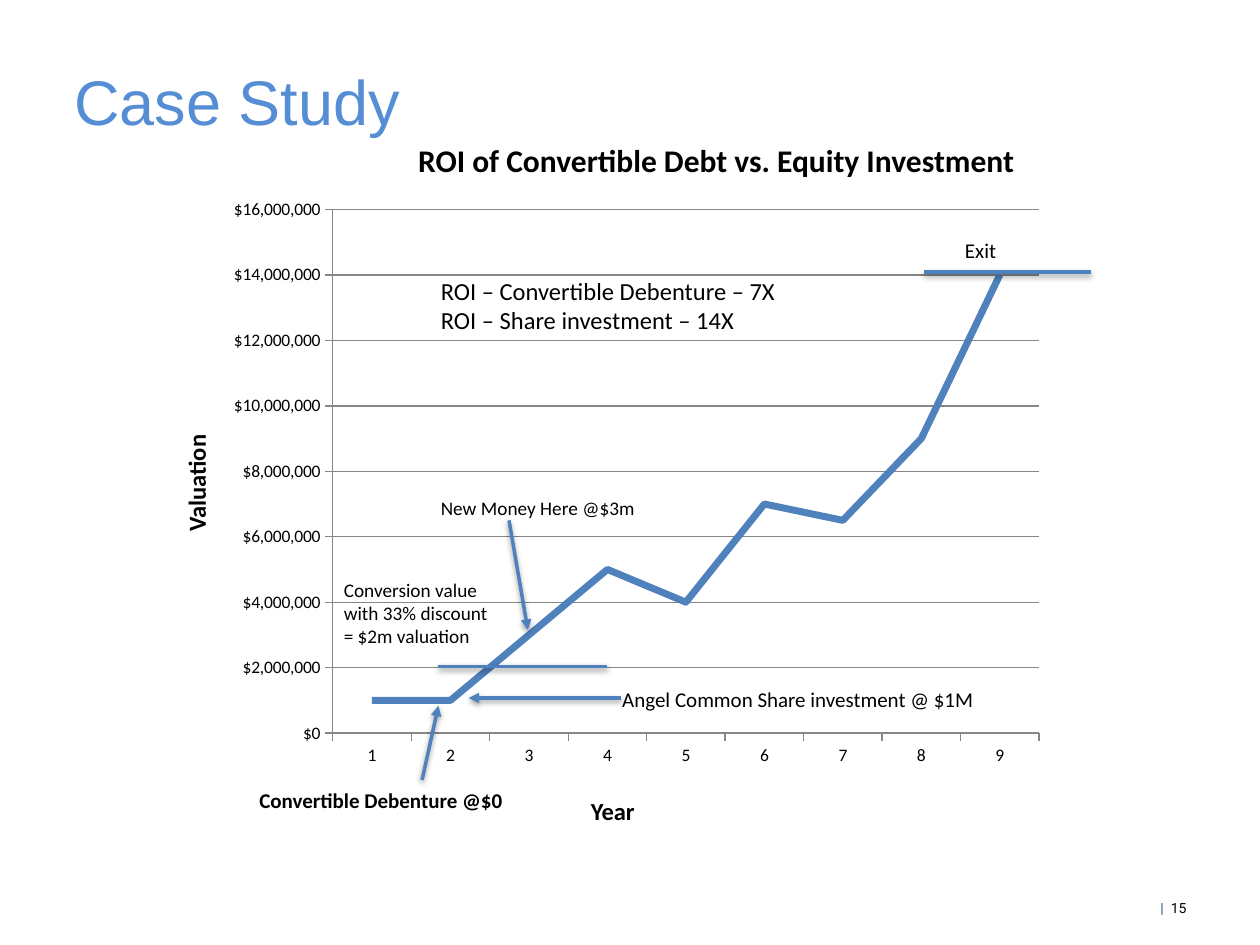
import pptx
import pptx.chart.data
import pptx.dml.color
import pptx.enum.chart
import pptx.enum.shapes
import pptx.enum.text
import pptx.oxml
import pptx.oxml.ns
import pptx.util
from pptx.util import Inches

RGBColor = pptx.dml.color.RGBColor
BLACK = RGBColor(0x00, 0x00, 0x00)
BLUE = RGBColor(0x4F, 0x81, 0xBD)
TITLE_BLUE = RGBColor(0x55, 0x8E, 0xD5)
NAVY = RGBColor(0x1F, 0x49, 0x7D)
GREY = RGBColor(0x86, 0x86, 0x86)

VALUATIONS = [1_000_000, 1_000_000, 3_000_000, 5_000_000, 4_000_000,
              7_000_000, 6_500_000, 9_000_000, 14_000_000]

# left, top, width, height, size, bold, lines
LABELS = [
    (4.84, 5.4, 3.26, 0.3, 12, False, ["Angel Common Share investment @ $1M"]),
    (1.96, 6.2, 2.61, 0.3, 12, True, ["Convertible Debenture @$0"]),
    (4.59, 6.27, 0.68, 0.34, 14, True, ["Year"]),
    (3.4, 2.14, 3.22, 0.57, 14, False,
     ["ROI – Convertible Debenture – 7X", "ROI – Share investment – 14X"]),
    (2.63, 4.54, 1.41, 0.72, 11, False,
     ["Conversion value", "with 33% discount", "= $2m valuation"]),
    (3.4, 3.89, 1.8, 0.28, 11, False, ["New Money Here @$3m"]),
    (7.56, 1.84, 0.55, 0.3, 12, False, ["Exit"]),
    (3.22, 1.07, 5, 0.4, 18, True,
     ["ROI of Convertible Debt vs. Equity Investment"]),
]

# start, end, whether an arrowhead sits at the end
MARKERS = [
    ((3.48, 5.29), (4.82, 5.29), False),  # conversion level
    ((4.04, 4.13), (4.19, 5), True),      # new money
    ((7.33, 2.16), (8.66, 2.16), False),  # exit level
    ((4.93, 5.54), (3.72, 5.54), True),   # common shares
    ((3.35, 6.19), (3.48, 5.6), True),    # debenture
]


def style(font, name, size, color, bold=False):
    font.name = name
    font.size = pptx.util.Pt(size)
    font.color.rgb = color
    font.bold = bold


def add_run(para, text, *font_style):
    span = para.add_run()
    span.text = text
    style(span.font, *font_style)


def add_title(page, text):
    title = page.shapes.title
    title.left, title.top = Inches(0.49), Inches(0.42)
    title.width, title.height = Inches(9), Inches(0.75)
    frame = title.text_frame
    frame.auto_size = pptx.enum.text.MSO_AUTO_SIZE.NONE
    frame.vertical_anchor = pptx.enum.text.MSO_ANCHOR.MIDDLE
    para = frame.paragraphs[0]
    para.alignment = pptx.enum.text.PP_ALIGN.LEFT
    add_run(para, text, "Arial", 36, TITLE_BLUE)


def add_label(page, left, top, width, height, size, bold, lines):
    box = page.shapes.add_textbox(*map(Inches, (left, top, width, height)))
    frame = box.text_frame
    frame.word_wrap = False
    for index, line in enumerate(lines):
        para = frame.add_paragraph() if index else frame.paragraphs[0]
        add_run(para, line, "Calibri", size, BLACK, bold)
    return box


def add_marker(page, start, end, arrow):
    line = page.shapes.add_connector(
        pptx.enum.shapes.MSO_CONNECTOR.STRAIGHT, *map(Inches, start + end))
    line.line.color.rgb = BLUE
    line.line.width = pptx.util.Pt(2)
    namespace = pptx.oxml.ns.nsdecls("a")
    if arrow:
        line.line._get_or_add_ln().append(pptx.oxml.parse_xml(
            f'<a:tailEnd {namespace} type="triangle"/>'))
    # Soft shadow straight below the line
    line._element.spPr.append(pptx.oxml.parse_xml(
        f'<a:effectLst {namespace}><a:outerShdw blurRad="40000" dist="20000"'
        ' dir="5400000" rotWithShape="0"><a:srgbClr val="000000">'
        '<a:alpha val="38000"/></a:srgbClr></a:outerShdw></a:effectLst>'))


def set_plot_area(chart, left, top, width, height):
    """Fix the inner plot area, in fractions of the chart frame."""
    plot_area = chart._chartSpace.chart.plotArea
    for old in plot_area.findall(pptx.oxml.ns.qn("c:layout")):
        plot_area.remove(old)
    plot_area.insert(0, pptx.oxml.parse_xml(
        f'<c:layout {pptx.oxml.ns.nsdecls("c")}><c:manualLayout>'
        '<c:layoutTarget val="inner"/><c:xMode val="edge"/><c:yMode val="edge"/>'
        f'<c:x val="{left}"/><c:y val="{top}"/>'
        f'<c:w val="{width}"/><c:h val="{height}"/>'
        '</c:manualLayout></c:layout>'))


def add_valuation_chart(page):
    data = pptx.chart.data.CategoryChartData()
    data.categories = [str(year) for year in range(1, len(VALUATIONS) + 1)]
    data.add_series("Series 1", VALUATIONS)
    chart = page.shapes.add_chart(
        pptx.enum.chart.XL_CHART_TYPE.LINE,
        *map(Inches, (1.73, 1.49, 6.65, 4.68)), data).chart
    chart.has_legend = False
    chart.has_title = False
    style(chart.font, "Calibri", 10, BLACK)
    chart.plots[0].vary_by_categories = False
    set_plot_area(chart, 0.137, 0.037, 0.843, 0.888)

    series = chart.plots[0].series[0]
    series.smooth = False
    series.format.line.color.rgb = BLUE
    series.format.line.width = pptx.util.Pt(4)

    for axis in (chart.category_axis, chart.value_axis):
        axis.major_tick_mark = pptx.enum.chart.XL_TICK_MARK.OUTSIDE
        axis.minor_tick_mark = pptx.enum.chart.XL_TICK_MARK.NONE
        axis.format.line.color.rgb = GREY
    values = chart.value_axis
    values.minimum_scale, values.maximum_scale = 0, 16_000_000
    values.major_unit = 2_000_000
    values.has_major_gridlines = True
    values.major_gridlines.format.line.color.rgb = GREY
    values.tick_labels.number_format = '"$"#,##0'
    values.tick_labels.number_format_is_linked = False


def add_page_number(page):
    box = page.shapes.add_textbox(*map(Inches, (9.21, 7.14, 0.54, 0.36)))
    frame = box.text_frame
    frame.word_wrap = False
    frame.margin_left = frame.margin_right = 0
    frame.margin_top = frame.margin_bottom = 0
    add_run(frame.paragraphs[0], "|  ", "Roboto", 8, NAVY)
    add_run(frame.paragraphs[0], "15", "Roboto", 8, BLACK)


def main():
    deck = pptx.Presentation()
    deck.slide_width, deck.slide_height = Inches(10), Inches(7.5)
    page = deck.slides.add_slide(deck.slide_layouts[5])
    add_title(page, "Case Study")
    add_valuation_chart(page)

    # Captions over and around the chart
    for label in LABELS:
        add_label(page, *label)
    axis_title = add_label(page, 0.96, 3.55, 1.2, 0.34, 14, True, ["Valuation"])
    axis_title.rotation = 270

    # Level lines and arrows
    for marker in MARKERS:
        add_marker(page, *marker)
    add_page_number(page)
    deck.save("out.pptx")


if __name__ == "__main__":
    main()
